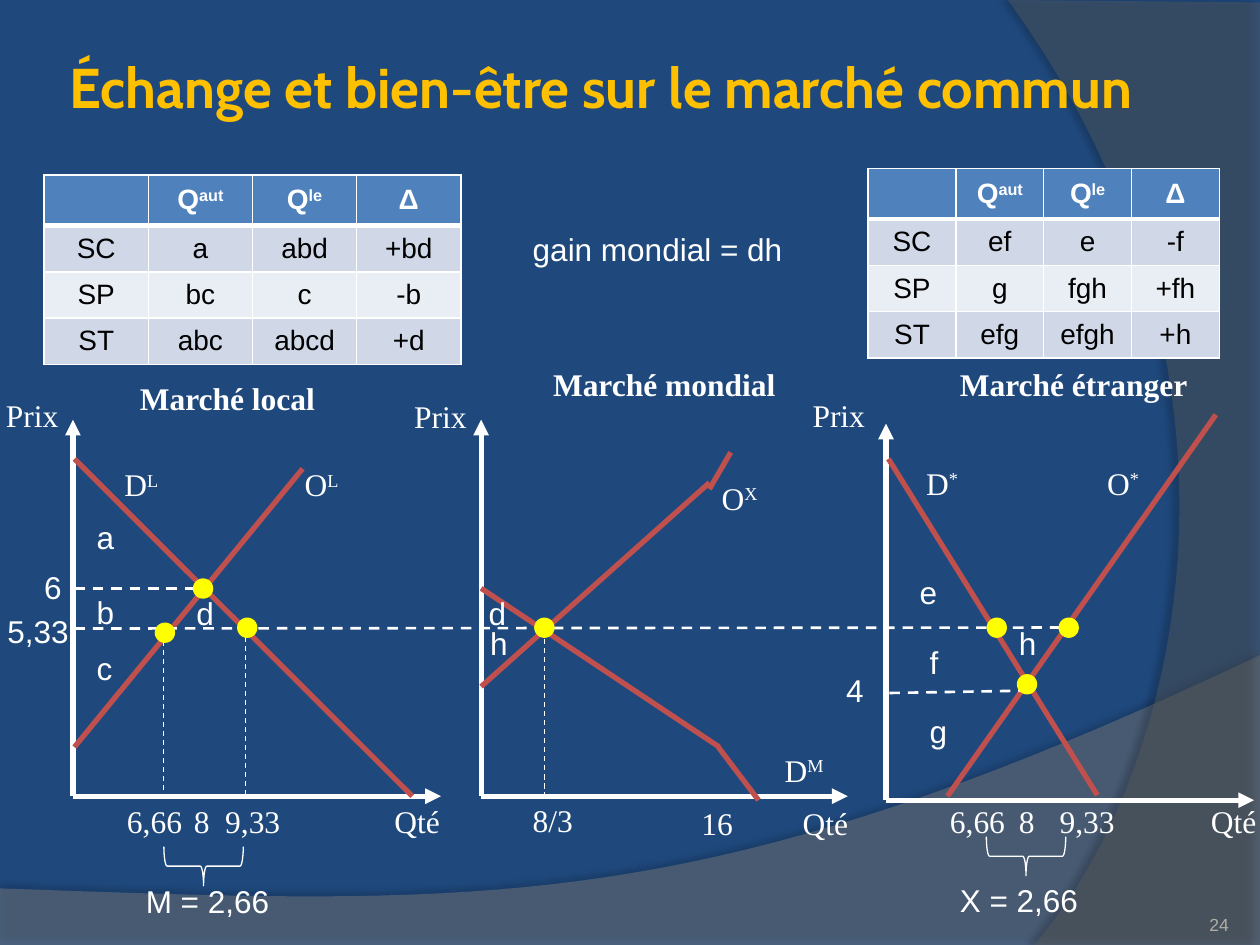
from pptx import Presentation
from pptx import util as u
from pptx.dml.color import RGBColor
from pptx.enum import dml, shapes, text
from pptx.oxml import ns
from lxml import etree

C = {"bg": "1F497D", "title": "FFC000", "white": "FFFFFF", "black": "000000",
     "curve": "C0504D", "dot": "FFFF00", "page": "B0AFA6", "head": "4F81BD",
     "odd": "D0D8E8", "even": "E9EDF4", "wave": "7F7F7F", "side": "5E5E5E"}
SERIF, SANS = "Times New Roman", "Arial"

prs = Presentation()
prs.slide_width, prs.slide_height = u.Cm(25.4), u.Cm(19.05)
s = prs.slides.add_slide(prs.slide_layouts[6])
s.background.fill.solid()
s.background.fill.fore_color.rgb = RGBColor.from_string(C["bg"])


def write(p, content, size, font, color="white", bold=False):
    """Fill a paragraph; what follows ^ is set as superscript."""
    base, _, sup = content.partition("^")
    p.text = base
    if sup:
        r = p.add_run()
        r.text = sup
        r._r.get_or_add_rPr().set("baseline", "30000")
    for r in p.runs:
        r.font.size, r.font.name, r.font.bold = u.Pt(size), font, bold
        r.font.color.rgb = RGBColor.from_string(C[color])


def line(x1, y1, x2, y2, width, color="white", dash=False, arrow=False):
    ln = s.shapes.add_connector(shapes.MSO_CONNECTOR.STRAIGHT,
                                u.Cm(x1), u.Cm(y1), u.Cm(x2), u.Cm(y2))
    ln.line.width = u.Pt(width)
    ln.line.color.rgb = RGBColor.from_string(C[color])
    if dash:
        ln.line.dash_style = dml.MSO_LINE.DASH
    if arrow:
        etree.SubElement(ln.line._get_or_add_ln(), ns.qn("a:tailEnd"), type="triangle")
    etree.SubElement(ln._element.spPr, ns.qn("a:effectLst"))


# Background swooshes: corners, then a Bezier curve from the last corner
swooshes = [
    ("wave", 45, [(0, 17.91), (0, 19.08), (25.4, 19.08), (25.4, 13.21)],
     [(14.2, 18.52), (9.93, 18.26), (0, 17.91)], 35, 3.5, 270),
    ("side", 40, [(25.4, 0.05), (25.4, 19.05), (20.85, 19.05)],
     [(23.75, 15.72), (25.86, 7.62), (20.32, 0)], 45, 4, 180)]
for color, alpha, corners, curve, shade, dist, angle in swooshes:
    bezier = [corners[-1]] + curve
    pts = list(corners)
    for i in range(1, 41):
        t = i / 40
        weights = [(1 - t) ** 3, 3 * t * (1 - t) ** 2, 3 * t * t * (1 - t), t ** 3]
        pts.append([sum(w * b[k] for w, b in zip(weights, bezier)) for k in (0, 1)])
    pts = [(u.Cm(x), u.Cm(y)) for x, y in pts]
    fb = s.shapes.build_freeform(*pts[0])
    fb.add_line_segments(pts[1:], close=True)
    sp = fb.convert_to_shape()
    sp.shadow.inherit = False
    sp.line.fill.background()
    sp.fill.solid()
    sp.fill.fore_color.rgb = RGBColor.from_string(C[color])
    spPr = sp._element.spPr
    etree.SubElement(spPr.find(".//" + ns.qn("a:srgbClr")), ns.qn("a:alpha"),
                     val=str(alpha * 1000))
    shadow = etree.SubElement(spPr.find(ns.qn("a:effectLst")), ns.qn("a:outerShdw"),
                              blurRad=str(u.Pt(4)), dist=str(u.Pt(dist)),
                              dir=str(angle * 60000), rotWithShape="0")
    clr = etree.SubElement(shadow, ns.qn("a:srgbClr"), val=C["black"])
    etree.SubElement(clr, ns.qn("a:alpha"), val=str(shade * 1000))

# Title and page number
framed = [
    ("Échange et bien-être sur le marché commun", 1.27, 0.15, 24.13, 3.18, 0.13,
     text.MSO_ANCHOR.MIDDLE, text.PP_ALIGN.LEFT, (32, "Cabin", "title", True)),
    ("24", 22.66, 17.83, 2.11, 1.02, 0,
     text.MSO_ANCHOR.BOTTOM, text.PP_ALIGN.RIGHT, (10, SANS, "page"))]
for content, x, y, w, h, inset, anchor, align, style in framed:
    tf = s.shapes.add_textbox(u.Cm(x), u.Cm(y), u.Cm(w), u.Cm(h)).text_frame
    tf.word_wrap, tf.vertical_anchor = True, anchor
    tf.margin_left = tf.margin_right = tf.margin_top = tf.margin_bottom = u.Cm(inset)
    tf.paragraphs[0].alignment = align
    write(tf.paragraphs[0], content, *style)

# Axes of the three markets
for x, y, w in [(1.47, 16.05, 7.42), (9.7, 16.05, 7.39), (17.86, 16.13, 7.42)]:
    line(x, y, x + w, y, 3, arrow=True)
    line(x, y, x, y - 7.59, 3, arrow=True)

# Supply and demand curves
for ends in [(1.5, 15.06, 6.1, 9.45), (1.5, 9.25, 8.31, 16.05),
             (9.7, 11.86, 14.5, 15.06), (14.48, 15.06, 15.29, 16.13),
             (9.7, 13.84, 14.3, 9.73), (14.73, 9.12, 14.3, 9.86),
             (19.1, 16.05, 24.51, 8.36), (17.91, 9.25, 22.12, 16.03)]:
    line(*ends, 3, "curve")

# Price levels and quantity drops
for ends in [(1.5, 11.86, 3.94, 11.86), (1.5, 12.67, 21.56, 12.65),
             (17.93, 13.97, 20.83, 13.92)]:
    line(*ends, 1.5, dash=True)
for x, top in [(3.3, 12.73), (4.95, 12.65), (10.97, 12.88)]:
    line(x, top, x, 16.05, 0.75, dash=True)

# Equilibrium points
for x, y in [(3.89, 11.66), (3.12, 12.55), (4.78, 12.45), (10.77, 12.45),
             (19.89, 12.45), (21.34, 12.45), (20.5, 13.59)]:
    sp = s.shapes.add_shape(shapes.MSO_SHAPE.FLOWCHART_CONNECTOR,
                            u.Cm(x), u.Cm(y), u.Cm(0.41), u.Cm(0.41))
    sp.shadow.inherit = False
    sp.fill.solid()
    sp.fill.fore_color.rgb = RGBColor.from_string(C["dot"])
    sp.line.fill.background()

# Braces under the traded quantities
for x, y in [(3.71, 16.66), (20.29, 16.46)]:
    sp = s.shapes.add_shape(shapes.MSO_SHAPE.LEFT_BRACE,
                            u.Cm(x), u.Cm(y), u.Cm(0.79), u.Cm(1.6))
    sp.rotation = 270
    sp.shadow.inherit = False
    sp.fill.background()
    sp.line.color.rgb = RGBColor.from_string(C["white"])
    sp.line.width = u.Pt(0.75)

# Labels: text, left, top, width
labels = {
    (SERIF, True): [
        ("Marché local", 2.57, 7.52, 4.09), ("Marché mondial", 10.9, 7.24, 5.05),
        ("Marché étranger", 19.1, 7.24, 5.16)],
    (SERIF, False): [
        ("Prix", -0.13, 7.85, 1.57), ("Prix", 8.1, 7.87, 1.57), ("Prix", 16.13, 7.85, 1.57),
        ("Qté", 7.7, 16.05, 1.45), ("Qté", 15.93, 16.08, 1.45), ("Qté", 24.16, 16.05, 1.45),
        ("6,66", 2.31, 16.05, 1.63), ("8", 3.66, 16.05, 0.84), ("9,33", 4.29, 16.05, 1.63),
        ("8/3", 10.49, 16.03, 1.32), ("16", 13.89, 16.08, 1.14),
        ("6,66", 18.9, 16.05, 1.63), ("8", 20.29, 16.05, 0.84), ("9,33", 21.11, 16.05, 1.63),
        ("D^L", 2.26, 9.25, 1.24), ("O^L", 5.89, 9.25, 1.24), ("O^X", 14.3, 9.53, 1.3),
        ("D^M", 15.57, 15.01, 1.35), ("D^*", 18.42, 9.22, 1.19), ("O^*", 22.07, 9.22, 1.19)],
    (SANS, False): [
        ("6", 0.64, 11.33, 0.86), ("5,33", -0.1, 12.22, 1.75), ("4", 16.81, 13.41, 0.86),
        ("a", 1.7, 10.31, 0.86), ("b", 1.7, 11.84, 0.86), ("c", 1.7, 12.95, 0.84),
        ("d", 3.71, 11.86, 0.86), ("d", 9.6, 11.86, 0.86), ("h", 9.63, 12.45, 0.86),
        ("e", 18.29, 11.43, 0.86), ("f", 18.49, 12.83, 0.69), ("g", 18.49, 14.22, 0.86),
        ("h", 20.29, 12.45, 0.86), ("M = 2,66", 2.69, 17.65, 3.2),
        ("X = 2,66", 19.1, 17.63, 3.2), ("gain mondial = dh", 10.49, 4.52, 5.59)]}
for (font, bold), items in labels.items():
    for content, x, y, w in items:
        tf = s.shapes.add_textbox(u.Cm(x), u.Cm(y), u.Cm(w), u.Cm(1.02)).text_frame
        tf.word_wrap = False
        tf.auto_size = text.MSO_AUTO_SIZE.SHAPE_TO_FIT_TEXT
        write(tf.paragraphs[0], content, 18, font, bold=bold)

# Surplus tables
header = ["", "Q^aut", "Q^le", "Δ"]
tables = [
    (17.5, 3.4, 1.77, [["SC", "ef", "e", "-f"], ["SP", "g", "fgh", "+fh"],
                       ["ST", "efg", "efgh", "+h"]]),
    (0.89, 3.53, 2.1, [["SC", "a", "abd", "+bd"], ["SP", "bc", "c", "-b"],
                       ["ST", "abc", "abcd", "+d"]])]
for x, y, col_w, body in tables:
    tbl = s.shapes.add_table(4, 4, u.Cm(x), u.Cm(y), u.Cm(4 * col_w), u.Cm(3.72)).table
    for col in tbl.columns:
        col.width = u.Cm(col_w)
    for i, row in enumerate([header] + body):
        for j, content in enumerate(row):
            cell = tbl.cell(i, j)
            cell.vertical_anchor = text.MSO_ANCHOR.MIDDLE
            for side in ("lnL", "lnR", "lnT", "lnB"):
                thick = (i, side) in [(0, "lnB"), (1, "lnT")]
                border = etree.SubElement(cell._tc.get_or_add_tcPr(), ns.qn("a:" + side),
                                          w=str(u.Pt(3 if thick else 1)))
                fill = etree.SubElement(border, ns.qn("a:solidFill"))
                etree.SubElement(fill, ns.qn("a:srgbClr"), val=C["white"])
            cell.fill.solid()
            band = "head" if i == 0 else "odd" if i % 2 else "even"
            cell.fill.fore_color.rgb = RGBColor.from_string(C[band])
            p = cell.text_frame.paragraphs[0]
            p.alignment = text.PP_ALIGN.CENTER
            if content:
                write(p, content, 16, SANS, "black" if i else "white", i == 0)

prs.save("out.pptx")
